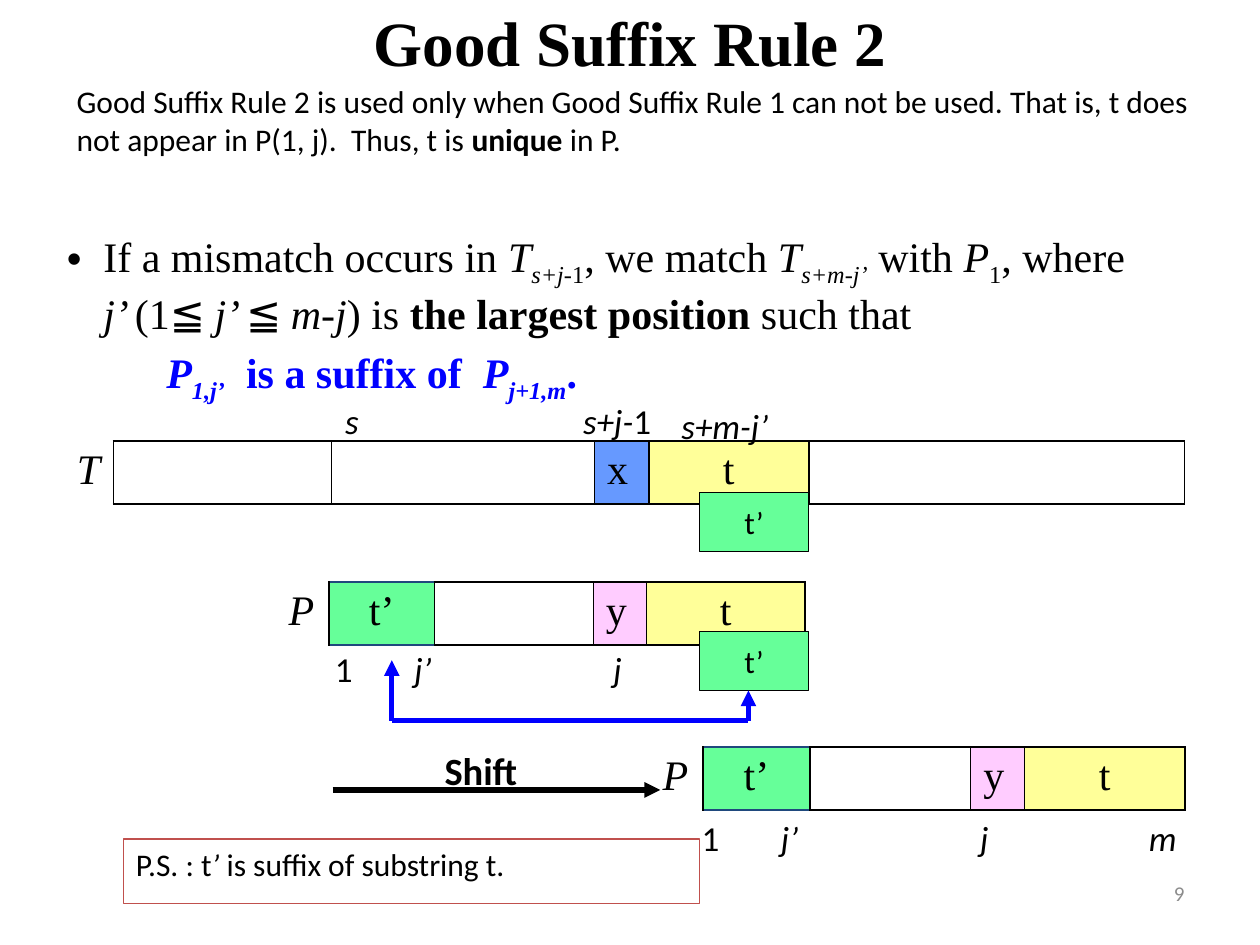
from lxml.etree import SubElement
from pptx import Presentation
from pptx.dml.color import RGBColor
from pptx.enum.shapes import MSO_CONNECTOR, MSO_SHAPE
from pptx.enum.text import MSO_ANCHOR, MSO_AUTO_SIZE, PP_ALIGN
from pptx.oxml.ns import qn
from pptx.util import Inches, Pt

SERIF, SANS = "Times New Roman", "Calibri"
BLACK, BLUE, GREY, RED, NAVY = "000000", "0000FF", "8C8C8C", "C0504D", "1F497D"
GREEN, YELLOW, PINK, SKY = "66FF99", "FFFF99", "FFCCFF", "6699FF"


def rgb(color):
    return RGBColor.from_string(color)


def write(p, runs, size, font=SANS, color=BLACK, align=PP_ALIGN.LEFT):
    """Fill p with (text, flags) runs: b bold, i italic, s subscript, c Calibri."""
    p.alignment = align
    for text, flags in runs:
        r = p.add_run()
        r.text = text
        f = r.font
        f.size, f.name = Pt(size), SANS if "c" in flags else font
        f.bold, f.italic = "b" in flags, "i" in flags
        f.color.rgb = rgb(color)
        if "s" in flags:
            f._element.set("baseline", "-25000")


def place(sp, left, top, width, height):
    sp.left, sp.top = Inches(left), Inches(top)
    sp.width, sp.height = Inches(width), Inches(height)


def add_text(s, box, runs, size, **style):
    tf = s.shapes.add_textbox(*map(Inches, box)).text_frame
    tf.word_wrap = True
    write(tf.paragraphs[0], runs, size, **style)
    return tf


def add_label(s, left, top, runs, width=0.47):
    add_text(s, (left, top, width, 0.43), runs, 20)


def add_box(s, box, line, runs, fill=None, align=PP_ALIGN.LEFT, anchor=MSO_ANCHOR.TOP):
    sp = s.shapes.add_shape(MSO_SHAPE.RECTANGLE, *map(Inches, box))
    sp.shadow.inherit = False
    if fill:
        sp.fill.solid()
        sp.fill.fore_color.rgb = rgb(fill)
    else:
        sp.fill.background()
    sp.line.color.rgb, sp.line.width = rgb(line), Pt(0.75)
    sp.text_frame.vertical_anchor = anchor
    write(sp.text_frame.paragraphs[0], runs, 18, align=align)


def add_line(s, start, end, color, arrow=True):
    points = map(Inches, (*start, *end))
    cn = s.shapes.add_connector(MSO_CONNECTOR.STRAIGHT, *points)
    cn.line.color.rgb, cn.line.width = rgb(color), Pt(3)
    if arrow:
        SubElement(cn.line._get_or_add_ln(), qn("a:tailEnd"), type="triangle")
    SubElement(cn._element.spPr, qn("a:effectLst"))


def set_borders(cell, colors):
    """Set left, right, top and bottom borders; None hides one."""
    tcPr = cell._tc.get_or_add_tcPr()
    for i, (side, color) in enumerate(zip("LRTB", colors)):
        ln = tcPr.makeelement(qn("a:ln" + side), {"w": str(Pt(1))})
        tcPr.insert(i, ln)
        if color:
            fill = SubElement(ln, qn("a:solidFill"))
            SubElement(fill, qn("a:srgbClr"), val=color)
        else:
            SubElement(ln, qn("a:noFill"))


def add_string(s, left, top, height, name, parts):
    """Draw a named string as a row of (width, text, fill) parts."""
    parts = [(0.42 if name == "P" else 0.39, name, None), *parts]
    width = sum(part[0] for part in parts)
    box = map(Inches, (left, top, width, height))
    table = s.shapes.add_table(1, len(parts), *box).table
    table.first_row = table.horz_banding = False
    for i, (width, text, fill) in enumerate(parts):
        table.columns[i].width = Inches(width)
        cell = table.cell(0, i)
        if fill:
            cell.fill.solid()
            cell.fill.fore_color.rgb = rgb(fill)
        else:
            cell.fill.background()
        edge = NAVY if fill == GREEN else BLACK
        set_borders(cell, (BLACK, BLACK, edge, edge) if i else (None, BLACK, None, None))
        if text:
            centred = fill in (GREEN, YELLOW)
            write(cell.text_frame.paragraphs[0], [(text, "" if i else "i")], 24,
                  font=SERIF, align=PP_ALIGN.CENTER if centred else PP_ALIGN.LEFT)


def add_pattern(s, left, top, height, unit):
    """Draw P, whose prefix t’ and suffix t are 2 and 3 units wide."""
    add_string(s, left, top, height, "P", [
        (2 * unit, "t’", GREEN), (3 * unit, "", None),
        (unit, "y", PINK), (3 * unit, "t", YELLOW)])


def add_positions(s, left, top):
    for offset, text, flags in ((0, "1", ""), (0.63, "j’", "i"), (2.21, "j", "i")):
        add_label(s, left + offset, top, [(text, flags)])


def fill_title(s):
    title = s.shapes.title
    place(title, 0.5, -0.03, 9, 0.71)
    title.text_frame.auto_size = MSO_AUTO_SIZE.NONE
    write(title.text_frame.paragraphs[0], [("Good Suffix Rule 2", "b")], 36,
          font=SERIF, align=PP_ALIGN.CENTER)


def fill_body(s):
    body = s.placeholders[1]
    place(body, 0.43, 1.78, 8.6, 1.73)
    tf = body.text_frame
    tf.auto_size = MSO_AUTO_SIZE.NONE
    rule, result = tf.paragraphs[0], tf.add_paragraph()
    write(rule, [
        ("If a mismatch occurs in ", ""), ("T", "i"), ("s+j-", "is"), ("1", "s"),
        (", we match ", ""), ("T", "i"), ("s+m-j’", "is"), (" with ", ""),
        ("P", "i"), ("1", "s"), (", where ", ""), ("j’ ", "i"), ("(1", ""),
        ("≦ ", "c"), ("j’ ", "i"), ("≦ ", "c"), ("m", "i"), ("-", ""), ("j", "i"),
        (") is ", ""), ("the largest position", "b"), (" such that", "")],
        24, font=SERIF)
    write(result, [
        ("\t\t", "bi"), ("P", "bi"), ("1,j’", "bis"), ("  is a suffix of  ", "b"),
        ("P", "bi"), ("j+1,m", "bis"), (".", "b")], 24, font=SERIF, color=BLUE)
    for p in (rule, result):
        p.space_before = Pt(4.8)
        pPr = p._p.get_or_add_pPr()
        pPr.set("marL", str(Inches(0.29)))
        pPr.set("indent", str(-Inches(0.29)))
    SubElement(result._p.get_or_add_pPr(), qn("a:buNone"))


def main():
    prs = Presentation()
    prs.slide_width, prs.slide_height = Inches(10), Inches(7.5)
    s = prs.slides.add_slide(prs.slide_layouts[1])

    fill_title(s)
    fill_body(s)
    add_text(s, (0.51, 0.6, 9.06, 1.3), [
        ("Good Suffix Rule 2 is used only when Good Suffix Rule 1 can not be used. "
         "That is, t does not appear in P(1, j).  Thus, t is ", ""),
        ("unique", "b"), (" in P.", "")], 18)

    add_string(s, 0.51, 3.5, 0.49, "T", [
        (1.73, "", None), (2.09, "", None), (0.43, "x", SKY),
        (1.27, "t", YELLOW), (2.98, "", None)])
    add_label(s, 2.64, 3.12, [("s", "i")], 0.32)
    add_label(s, 4.53, 3.12, [("s+j-", "i"), ("1", "")], 0.87)
    add_label(s, 5.31, 3.16, [("s+m-j’", "i")], 1.1)

    add_pattern(s, 2.19, 4.62, 0.49, 0.42)
    add_positions(s, 2.56, 5.09)
    for top in (3.91, 5.01):
        add_box(s, (5.55, top, 0.87, 0.47), BLACK, [("t’", "")], GREEN,
                PP_ALIGN.CENTER, MSO_ANCHOR.MIDDLE)
    prefix, suffix, base = 3.11, 5.94, 5.72
    add_line(s, (prefix, base), (prefix, 5.24), BLUE)
    add_line(s, (suffix, base), (suffix, 5.48), BLUE)
    add_line(s, (prefix, base), (suffix, base), BLUE, arrow=False)

    add_line(s, (2.64, 6.27), (5.24, 6.27), BLACK)
    add_text(s, (3.43, 5.88, 0.94, 0.47), [("Shift", "b")], 22)
    add_pattern(s, 5.16, 5.93, 0.5, 0.425)
    add_positions(s, 5.47, 6.43)
    add_label(s, 9.02, 6.43, [("m", "i")], 0.39)

    add_box(s, (0.98, 6.66, 4.57, 0.51), RED, [
        ("P.S. : t", ""), ("’", "i"), (" is suffix of substring t.", "")])
    number = add_text(s, (7.17, 6.83, 2.33, 0.52), [("9", "")], 12,
                      color=GREY, align=PP_ALIGN.RIGHT)
    number.vertical_anchor = MSO_ANCHOR.MIDDLE

    prs.save("out.pptx")


if __name__ == "__main__":
    main()
